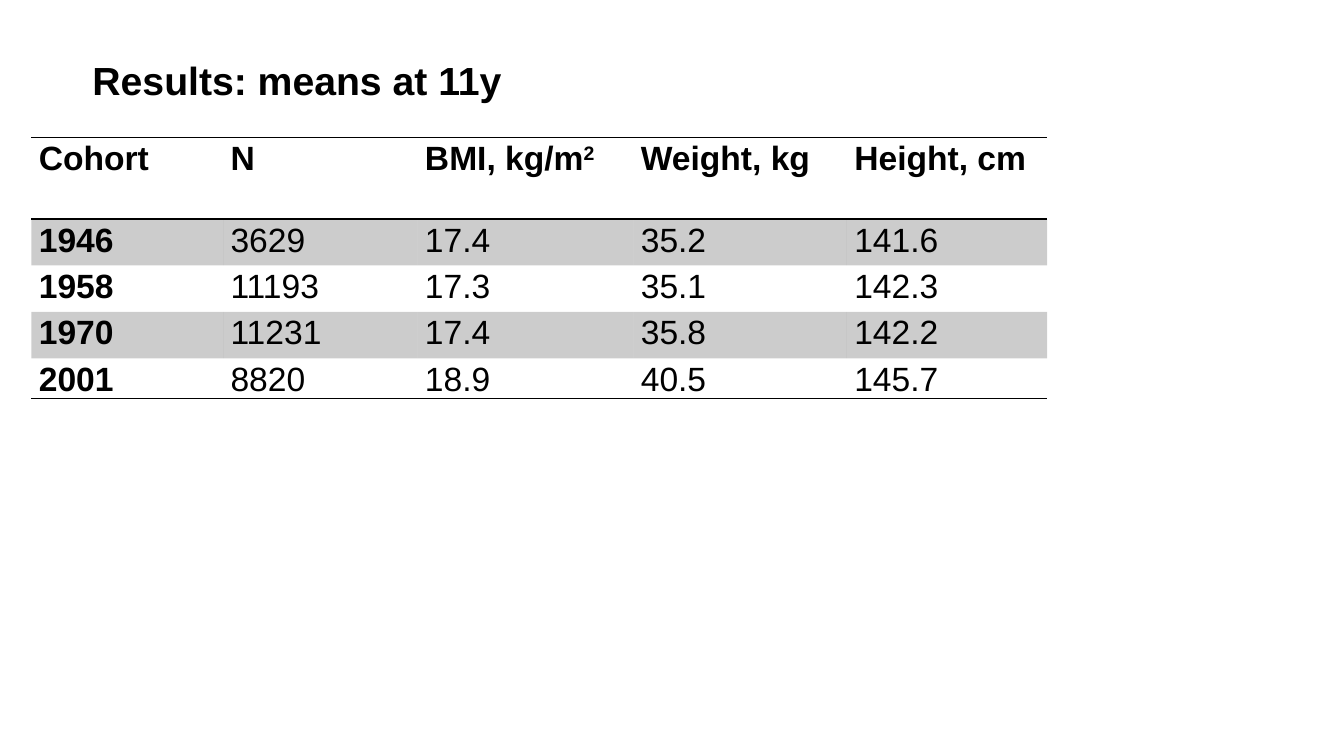
from lxml import etree
from pptx import Presentation
from pptx import util as u
from pptx.dml.color import RGBColor
from pptx.enum import text
from pptx.oxml.ns import qn

BLACK = RGBColor(0, 0, 0)
FONT = "Arial"
PLAIN = "{2D5ABB26-0587-4C30-8999-92F81FD0307C}"
WIDTHS = (4.83, 4.9, 5.44, 5.38, 5.05)
HEIGHTS = (2.06, 1.17, 1.17, 1.17, 0.91)
ROWS = (
    ("Cohort", "N", "BMI, kg/m^2", "Weight, kg", "Height, cm"),
    ("1946", "3629", "17.4", "35.2", "141.6"),
    ("1958", "11193", "17.3", "35.1", "142.3"),
    ("1970", "11231", "17.4", "35.8", "142.2"),
    ("2001", "8820", "18.9", "40.5", "145.7"),
)


def add_run(para, words, size, bold):
    run = para.add_run()
    run.text = words
    font = run.font
    font.name, font.size, font.bold = FONT, u.Pt(size), bold
    font.color.rgb = BLACK
    return run


def add_title(slide, left, top, width, height):
    title = slide.shapes.title
    title.left, title.top = u.Cm(left), u.Cm(top)
    title.width, title.height = u.Cm(width), u.Cm(height)
    frame = title.text_frame
    frame.margin_left = frame.margin_right = 0
    frame.margin_top = frame.margin_bottom = 0
    frame.vertical_anchor = text.MSO_ANCHOR.MIDDLE
    frame.word_wrap = True
    para = frame.paragraphs[0]
    para.alignment = text.PP_ALIGN.LEFT
    para.line_spacing = 0.9
    add_run(para, "Results: means at 11y", 28, True)


def add_rule(props, side):
    line = etree.SubElement(props, qn("a:" + side), w=str(u.Pt(1)))
    fill = etree.SubElement(line, qn("a:solidFill"))
    etree.SubElement(fill, qn("a:srgbClr"), val=str(BLACK))


def fill_cell(cell, words, bold, rules, shade):
    """Write a cell; text after ^ is raised, rules lists the ruled sides."""
    cell.margin_left = cell.margin_right = u.Cm(0.19)
    cell.margin_top = cell.margin_bottom = 0
    para = cell.text_frame.paragraphs[0]
    para.alignment = text.PP_ALIGN.JUSTIFY
    para.line_spacing = 1.07
    base, _, power = words.partition("^")
    add_run(para, base, 24, bold)
    if power:
        run = add_run(para, power, 24, bold)
        run.font._element.set("baseline", "30000")
    props = cell._tc.get_or_add_tcPr()
    for side in rules:
        add_rule(props, side)
    if shade:
        cell.fill.solid()
        cell.fill.fore_color.rgb = BLACK
        tint = props.find(qn("a:solidFill")).find(qn("a:srgbClr"))
        etree.SubElement(tint, qn("a:alpha"), val="20000")
    else:
        cell.fill.background()


def add_means(slide, left, top):
    frame = slide.shapes.add_table(
        len(ROWS), len(WIDTHS), u.Cm(left), u.Cm(top),
        u.Cm(sum(WIDTHS)), u.Cm(sum(HEIGHTS)))
    table = frame.table
    table.horz_banding = False
    next(frame.element.iter(qn("a:tableStyleId"))).text = PLAIN
    for col, width in zip(table.columns, WIDTHS):
        col.width = u.Cm(width)
    rules = {0: ("lnT", "lnB"), len(ROWS) - 1: ("lnB",)}
    for i, row in enumerate(ROWS):
        table.rows[i].height = u.Cm(HEIGHTS[i])
        for j, words in enumerate(row):
            fill_cell(table.cell(i, j), words, i == 0 or j == 0,
                      rules.get(i, ()), i % 2 == 1)


def main():
    deck = Presentation()
    deck.slide_width, deck.slide_height = u.Cm(33.87), u.Cm(19.05)
    slide = deck.slides.add_slide(deck.slide_layouts[5])
    add_title(slide, 2.33, 1.37, 29.21, 1.45)
    add_means(slide, 0.79, 3.46)
    deck.save("out.pptx")


if __name__ == "__main__":
    main()
